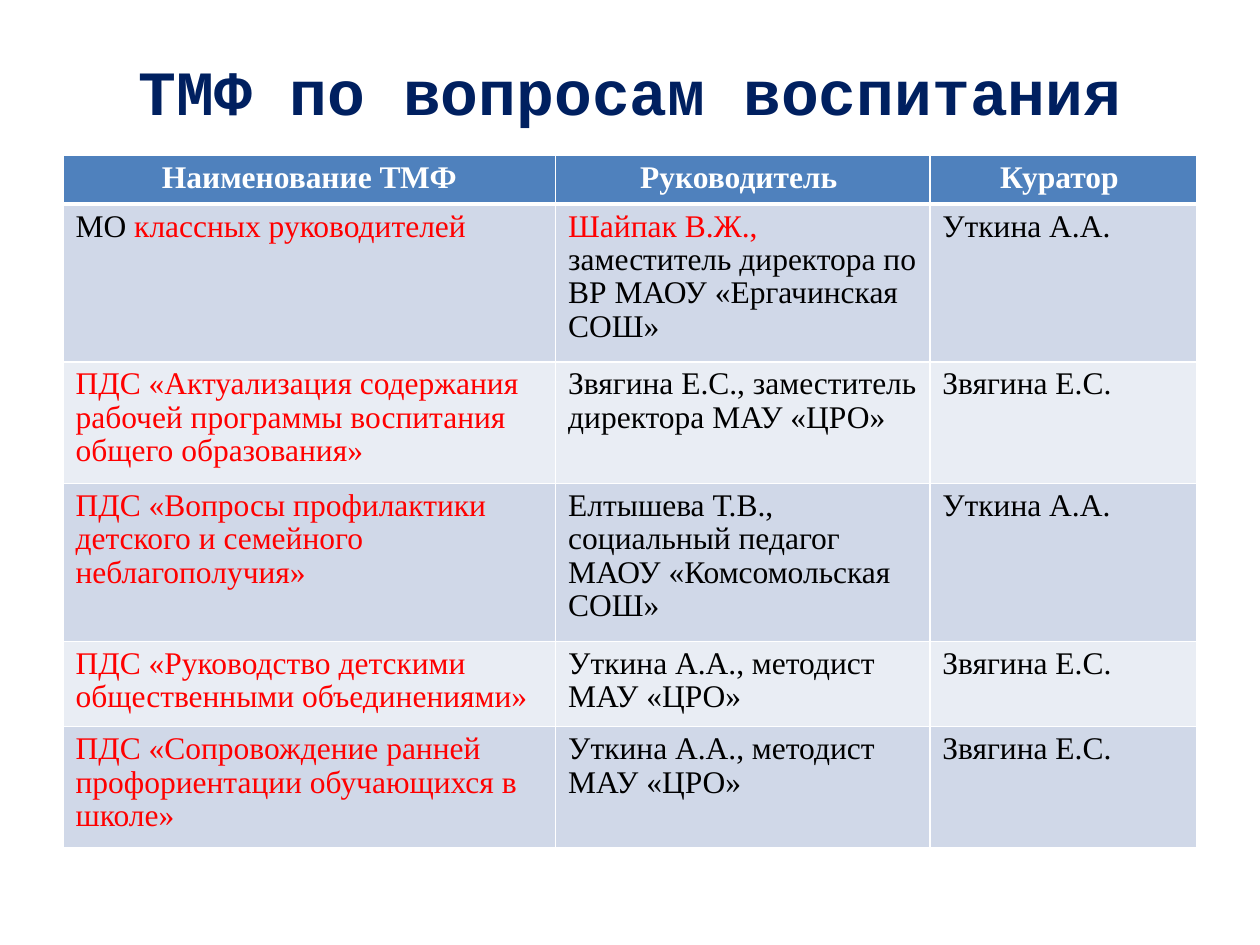
import pptx
import pptx.dml.color
import pptx.enum.text
import pptx.oxml
import pptx.oxml.ns
import pptx.util

RGBColor = pptx.dml.color.RGBColor
Inches = pptx.util.Inches
Pt = pptx.util.Pt
PP_ALIGN = pptx.enum.text.PP_ALIGN

NAVY = RGBColor(0x00, 0x20, 0x60)
BLUE = RGBColor(0x4F, 0x81, 0xBD)
BAND_DARK = RGBColor(0xD0, 0xD8, 0xE8)
BAND_LIGHT = RGBColor(0xE9, 0xED, 0xF4)
WHITE = RGBColor(0xFF, 0xFF, 0xFF)
BLACK = RGBColor(0x00, 0x00, 0x00)
RED = RGBColor(0xFF, 0x00, 0x00)

HEADINGS = ["Наименование ТМФ", "Руководитель ", "Куратор "]
GROUPS = [
    [[("МО ", BLACK), ("классных руководителей", RED)],
     [("Шайпак В.Ж., ", RED),
      ("заместитель директора по ВР МАОУ «Ергачинская СОШ»", BLACK)],
     "Уткина А.А."],
    ["ПДС «Актуализация содержания рабочей программы воспитания общего образования»",
     "Звягина Е.С., заместитель директора МАУ «ЦРО»", "Звягина Е.С."],
    ["ПДС «Вопросы профилактики детского и семейного неблагополучия»",
     "Елтышева Т.В., социальный педагог МАОУ «Комсомольская СОШ»", "Уткина А.А."],
    ["ПДС «Руководство детскими общественными объединениями»",
     "Уткина А.А., методист МАУ «ЦРО»", "Звягина Е.С."],
    ["ПДС «Сопровождение ранней профориентации обучающихся в школе»",
     "Уткина А.А., методист МАУ «ЦРО»", "Звягина Е.С."],
]
COLUMN_COLORS = [RED, BLACK, BLACK]
COLUMN_WIDTHS = [3.91, 2.97, 2.12]
ROW_HEIGHTS = [0.37, 1.2, 0.93, 1.2, 0.65, 0.93]


class SlideBuilder:
    """Holds the text style and the current slide, and adds elements to it."""

    title_font = "Courier New"
    table_font = "Times New Roman"

    def __init__(self, slide):
        self.slide = slide

    def title(self, text, left, top, width, height):
        box = self.slide.shapes.add_textbox(
            Inches(left), Inches(top), Inches(width), Inches(height))
        frame = box.text_frame
        frame.word_wrap = True
        frame.vertical_anchor = pptx.enum.text.MSO_ANCHOR.MIDDLE
        heading = frame.paragraphs[0]
        heading.alignment = PP_ALIGN.CENTER
        self.fill_paragraph(heading, [(text, NAVY)], self.title_font, 36, True)

    def fill_paragraph(self, paragraph, parts, font, size, bold):
        paragraph.font.name = font
        paragraph.font.size = Pt(size)
        paragraph.font.bold = bold
        for text, color in parts:
            run = paragraph.add_run()
            run.text = text
            run.font.color.rgb = color

    def borders(self, cell, top, bottom):
        properties = cell._tc.get_or_add_tcPr()
        widths = {"lnL": 1, "lnR": 1, "lnT": top, "lnB": bottom}
        for index, (side, width) in enumerate(widths.items()):
            line = pptx.oxml.parse_xml(
                f'<a:{side} {pptx.oxml.ns.nsdecls("a")} w="{Pt(width)}">'
                f'<a:solidFill><a:srgbClr val="{WHITE}"/></a:solidFill></a:{side}>')
            properties.insert(index, line)

    def cell(self, cell, parts, fill, is_header, top, bottom):
        cell.fill.solid()
        cell.fill.fore_color.rgb = fill
        self.borders(cell, top, bottom)
        paragraph = cell.text_frame.paragraphs[0]
        paragraph.line_spacing = 0.96
        paragraph.alignment = PP_ALIGN.CENTER if is_header else PP_ALIGN.LEFT
        self.fill_paragraph(paragraph, parts, self.table_font, 18, is_header)

    def table(self, headings, groups, left, top):
        rows = [headings] + groups
        table = self.slide.shapes.add_table(
            len(rows), len(headings), Inches(left), Inches(top),
            Inches(sum(COLUMN_WIDTHS)), Inches(sum(ROW_HEIGHTS))).table
        for column, width in zip(table.columns, COLUMN_WIDTHS):
            column.width = Inches(width)
        for r, (entries, height) in enumerate(zip(rows, ROW_HEIGHTS)):
            table.rows[r].height = Inches(height)
            fill = BLUE if r == 0 else BAND_DARK if r % 2 else BAND_LIGHT
            for c, entry in enumerate(entries):
                color = WHITE if r == 0 else COLUMN_COLORS[c]
                parts = [(entry, color)] if isinstance(entry, str) else entry
                self.cell(table.cell(r, c), parts, fill, r == 0,
                          3 if r == 1 else 1, 3 if r == 0 else 1)


def main():
    presentation = pptx.Presentation()
    presentation.slide_width = Inches(10)
    presentation.slide_height = Inches(7.5)
    slide = presentation.slides.add_slide(presentation.slide_layouts[6])
    builder = SlideBuilder(slide)
    builder.title("ТМФ по вопросам воспитания", 0, 0.44, 10, 0.55)
    builder.table(HEADINGS, GROUPS, 0.5, 1.23)
    presentation.save("out.pptx")


if __name__ == "__main__":
    main()
